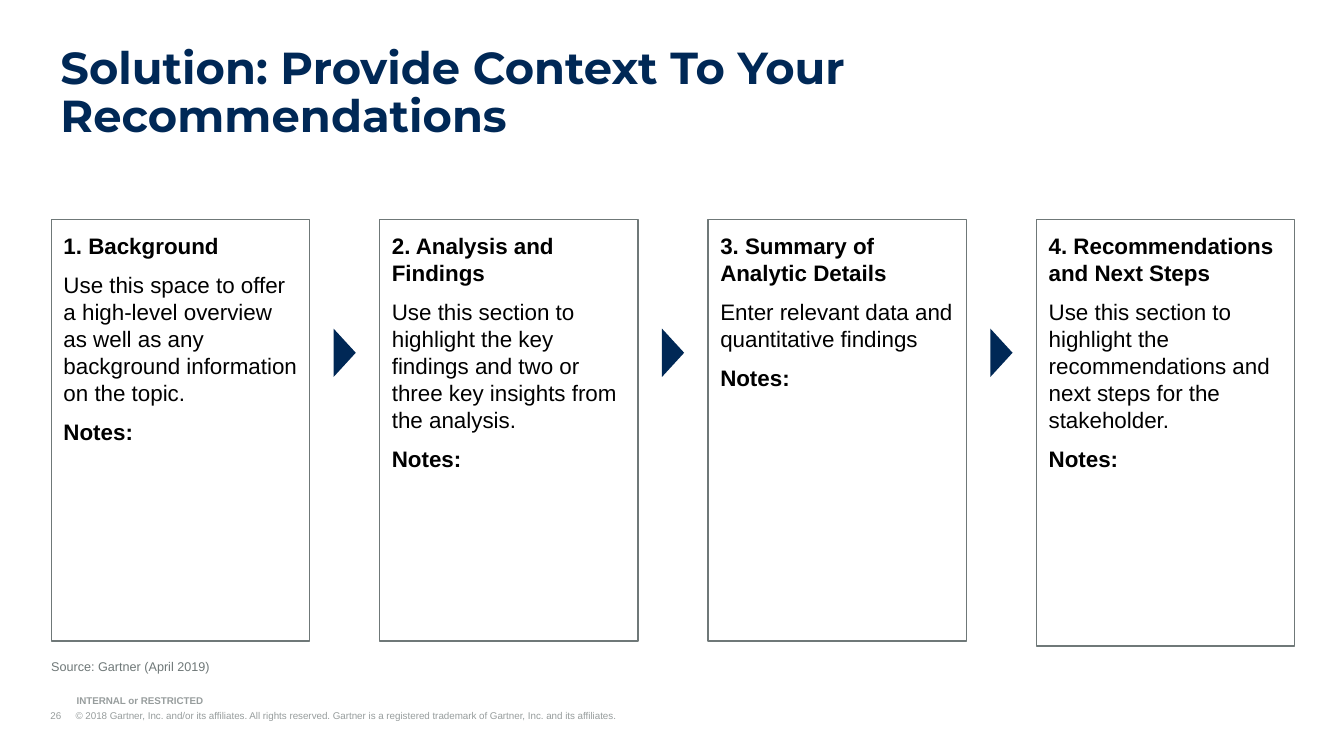
from dataclasses import dataclass

from lxml.etree import SubElement
from pptx import Presentation
from pptx.dml.color import RGBColor
from pptx.enum.shapes import MSO_SHAPE as Preset
from pptx.enum.text import MSO_ANCHOR as Anchor, MSO_AUTO_SIZE as AutoSize, PP_ALIGN as Align
from pptx.oxml.ns import qn
from pptx.slide import Slide
from pptx.text.text import TextFrame, _Paragraph as Paragraph
from pptx.util import Inches, Pt


@dataclass(frozen=True)
class Theme:
    navy: RGBColor = RGBColor.from_string("002856")
    grey: RGBColor = RGBColor.from_string("6F7878")
    pale_grey: RGBColor = RGBColor.from_string("979D9D")
    black: RGBColor = RGBColor.from_string("000000")
    title_font: str = "Montserrat"
    body_font: str = "Arial"
    title_size: int = 32
    body_size: int = 16
    source_size: int = 9
    footer_size: int = 7


@dataclass(frozen=True)
class Step:
    heading: str
    guidance: str
    height: float = 4.18


@dataclass(frozen=True)
class Label:
    text: str
    left: float
    top: float
    width: float
    height: float
    size: int
    color: RGBColor
    bold: bool = False
    inset: tuple[float, float] = (0, 0)
    anchor: Anchor = Anchor.BOTTOM
    tab: float = 0


THEME = Theme()

TITLE = "Solution: Provide Context To Your Recommendations"
STEPS = [
    Step("1. Background",
         "Use this space to offer a high-level overview as well as any "
         "background information on the topic."),
    Step("2. Analysis and Findings",
         "Use this section to highlight the key findings and two or three "
         "key insights from the analysis."),
    Step("3. Summary of Analytic Details",
         "Enter relevant data and quantitative findings"),
    Step("4. Recommendations and Next Steps",
         "Use this section to highlight the recommendations and next steps "
         "for the stakeholder.", 4.23),
]
LABELS = [
    Label("26\t© 2018 Gartner, Inc. and/or its affiliates. All rights reserved. "
          "Gartner is a registered trademark of Gartner, Inc. and its affiliates.",
          0.5, 7.04, 7.99, 0.12, THEME.footer_size, THEME.pale_grey, tab=0.25),
    Label("INTERNAL or RESTRICTED", 0.76, 6.89, 2.53, 0.12,
          THEME.footer_size, THEME.pale_grey, bold=True),
    Label("Source: Gartner (April 2019)", 0.41, 6.49, 10.15, 0.25,
          THEME.source_size, THEME.grey, inset=(0.1, 0.05), anchor=Anchor.TOP),
]

FIRST_LEFT, STEP_TOP, STEP_WIDTH, STEP_PITCH = 0.51, 2.18, 2.56, 3.257
STEP_INSET = 0.12
ARROW_WIDTH, ARROW_HEIGHT, ARROW_TOP = 0.48, 0.22, 3.39


def set_frame(frame: TextFrame, horizontal: float, vertical: float, anchor: Anchor) -> None:
    frame.word_wrap = True
    frame.auto_size = AutoSize.NONE
    frame.vertical_anchor = anchor
    frame.margin_left = frame.margin_right = Inches(horizontal)
    frame.margin_top = frame.margin_bottom = Inches(vertical)


def write(para: Paragraph, text: str, size: int, color: RGBColor,
          bold: bool = False, font: str = THEME.body_font) -> None:
    para.text = text
    para.alignment = Align.LEFT
    for span in para.runs:
        span.font.name = font
        span.font.size = Pt(size)
        span.font.bold = bold
        span.font.color.rgb = color


def add_hanging_tab(para: Paragraph, position: float) -> None:
    offset = Inches(position)
    properties = para._p.get_or_add_pPr()
    properties.set("marL", str(offset))
    properties.set("indent", str(-offset))
    tabs = SubElement(properties, qn("a:tabLst"))
    SubElement(tabs, qn("a:tab"), pos=str(offset), algn="l")


def add_title(page: Slide) -> None:
    title = page.shapes.title
    title.left, title.top = Inches(0.5), Inches(0.4)
    title.width, title.height = Inches(12.33), Inches(0.48)
    set_frame(title.text_frame, 0.1, 0.05, Anchor.TOP)
    para = title.text_frame.paragraphs[0]
    write(para, TITLE, THEME.title_size, THEME.navy, True, THEME.title_font)
    para.line_spacing = 0.9


def add_label(page: Slide, label: Label) -> None:
    box = page.shapes.add_textbox(Inches(label.left), Inches(label.top),
                                  Inches(label.width), Inches(label.height))
    set_frame(box.text_frame, *label.inset, label.anchor)
    para = box.text_frame.paragraphs[0]
    if label.tab:
        add_hanging_tab(para, label.tab)
    write(para, label.text, label.size, label.color, label.bold)


def add_step(page: Slide, step: Step, left: float) -> None:
    box = page.shapes.add_shape(Preset.RECTANGLE, Inches(left), Inches(STEP_TOP),
                                Inches(STEP_WIDTH), Inches(step.height))
    box.shadow.inherit = False
    box.fill.background()
    box.line.color.rgb = THEME.grey
    box.line.width = Pt(1)
    frame = box.text_frame
    set_frame(frame, STEP_INSET, STEP_INSET, Anchor.TOP)
    heading, guidance, notes = frame.paragraphs[0], frame.add_paragraph(), frame.add_paragraph()
    write(heading, step.heading, THEME.body_size, THEME.black, True)
    write(guidance, step.guidance, THEME.body_size, THEME.black)
    write(notes, "Notes:", THEME.body_size, THEME.black, True)
    heading.space_after = notes.space_before = Pt(9)


def add_arrow(page: Slide, left: float) -> None:
    arrow = page.shapes.add_shape(Preset.ISOSCELES_TRIANGLE, Inches(left), Inches(ARROW_TOP),
                                  Inches(ARROW_WIDTH), Inches(ARROW_HEIGHT))
    arrow.rotation = 90
    arrow.shadow.inherit = False
    arrow.fill.solid()
    arrow.fill.fore_color.rgb = THEME.navy
    arrow.line.fill.background()


def main() -> None:
    deck = Presentation()
    deck.slide_width, deck.slide_height = Inches(13.33), Inches(7.5)
    page = deck.slides.add_slide(deck.slide_layouts.get_by_name("Title Only"))
    add_title(page)
    for label in LABELS:
        add_label(page, label)
    gap = STEP_PITCH - STEP_WIDTH
    for index, step in enumerate(STEPS):
        left = FIRST_LEFT + index * STEP_PITCH
        add_step(page, step, left)
        if index:
            add_arrow(page, left - (gap + ARROW_WIDTH) / 2)
    deck.save("out.pptx")


if __name__ == "__main__":
    main()
